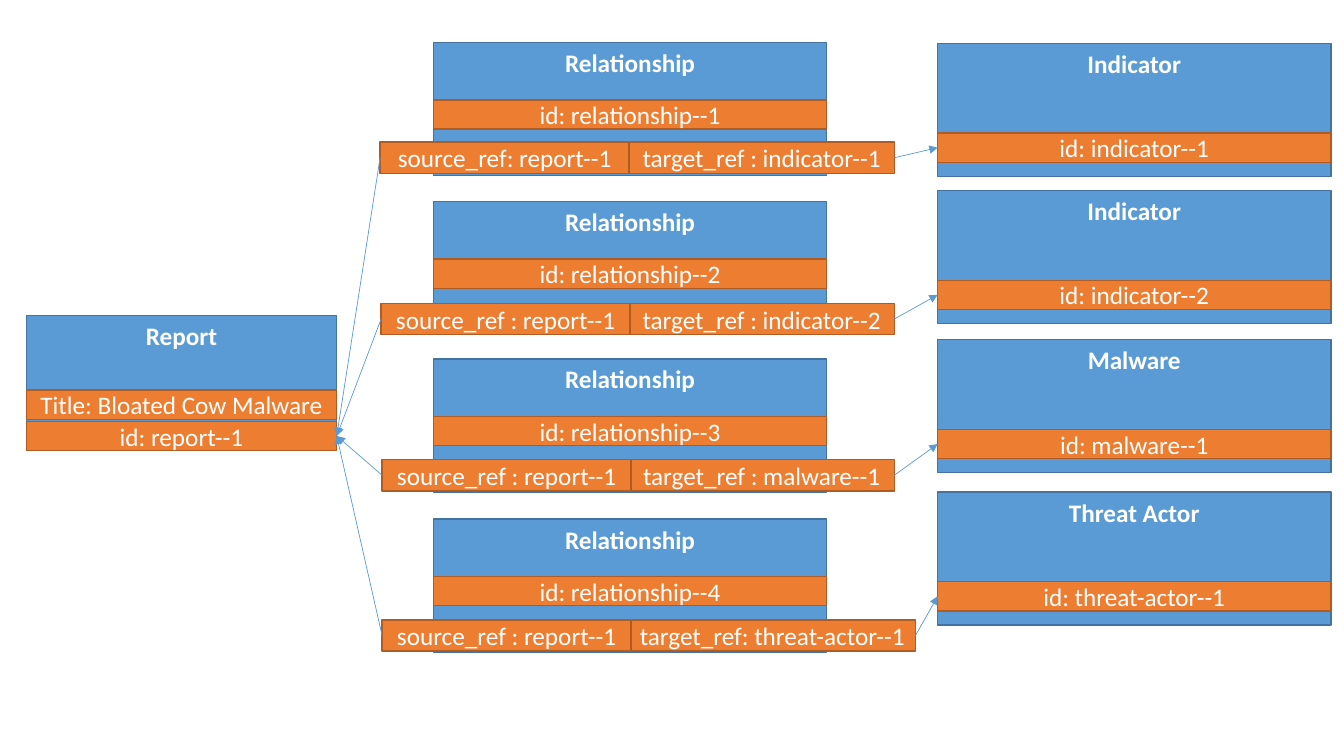
"""Build the slide of a report linked by relationships to its threat objects."""
from dataclasses import dataclass

from lxml.etree import SubElement
from pptx import Presentation
from pptx.dml.color import RGBColor
from pptx.enum.shapes import MSO_CONNECTOR, MSO_SHAPE
from pptx.enum.text import MSO_ANCHOR, PP_ALIGN
from pptx.oxml.ns import qn
from pptx.shapes.autoshape import Shape
from pptx.shapes.connector import Connector
from pptx.slide import Slide
from pptx.util import Inches, Pt

BLUE, BLUE_EDGE = "5B9BD5", "43739E"
ORANGE, ORANGE_EDGE = "ED7D31", "AF5C24"
WHITE = "FFFFFF"
RIGHT_SIDE, LEFT_SIDE = 3, 1
REPORT_LEFT, REPORT_WIDTH = 0.26, 3.08
RELATIONSHIP_LEFT, OBJECT_LEFT, CARD_WIDTH = 4.3, 9.3, 3.9
CARD_HEIGHT, FIELD_HEIGHT, REF_HEIGHT = 1.32, 0.29, 0.31
SOURCE_WIDTH, TARGET_LEFT = 2.47, 6.24


@dataclass
class Link:
    """One relationship and the object that it points to."""
    top: float
    ref_top: float
    source_left: float
    source: str
    target: str
    target_width: float
    object_top: float
    object_title: str
    object_id: str


LINKS = [
    Link(0.42, 1.41, 3.77, "source_ref: report--1", "target_ref : indicator--1", 2.63,
         0.43, "Indicator", "id: indicator--1"),
    Link(2.0, 3.01, 3.78, "source_ref : report--1", "target_ref : indicator--2", 2.63,
         1.89, "Indicator", "id: indicator--2"),
    Link(3.56, 4.56, 3.79, "source_ref : report--1", "target_ref : malware--1", 2.63,
         3.37, "Malware", "id: malware--1"),
    Link(5.15, 6.15, 3.79, "source_ref : report--1", "target_ref: threat-actor--1", 2.84,
         4.88, "Threat Actor", "id: threat-actor--1"),
]


def color(value: str) -> RGBColor:
    """Turn a hex string into a colour."""
    return RGBColor.from_string(value)


def add_box(slide: Slide, text: str, left: float, top: float, width: float,
            height: float, fill: str, edge: str) -> Shape:
    """Draw a filled rectangle with centred white text."""
    box = slide.shapes.add_shape(MSO_SHAPE.RECTANGLE, Inches(left), Inches(top),
                                 Inches(width), Inches(height))
    box.shadow.inherit = False
    box.fill.solid()
    box.fill.fore_color.rgb = color(fill)
    box.line.color.rgb = color(edge)
    box.line.width = Pt(1)
    box.text_frame.text = text
    box.text_frame.word_wrap = False
    paragraph = box.text_frame.paragraphs[0]
    paragraph.alignment = PP_ALIGN.CENTER
    font = paragraph.runs[0].font
    font.name, font.size = "Calibri", Pt(18)
    font.color.rgb = color(WHITE)
    return box


def add_card(slide: Slide, title: str, left: float, top: float, width: float) -> Shape:
    """Draw a blue card with a bold title at its top."""
    card = add_box(slide, title, left, top, width, CARD_HEIGHT, BLUE, BLUE_EDGE)
    card.text_frame.vertical_anchor = MSO_ANCHOR.TOP
    card.text_frame.paragraphs[0].runs[0].font.bold = True
    return card


def add_field(slide: Slide, text: str, left: float, top: float, width: float,
              height: float = FIELD_HEIGHT) -> Shape:
    """Draw an orange field of a card."""
    field = add_box(slide, text, left, top, width, height, ORANGE, ORANGE_EDGE)
    field.text_frame.vertical_anchor = MSO_ANCHOR.MIDDLE
    return field


def add_arrow(slide: Slide, start: Shape, start_side: int, end: Shape, end_side: int) -> Connector:
    """Join the sides of two fields with a thin arrow."""
    arrow = slide.shapes.add_connector(MSO_CONNECTOR.STRAIGHT, 0, 0, 0, 0)
    arrow.begin_connect(start, start_side)
    arrow.end_connect(end, end_side)
    arrow.line.color.rgb = color(BLUE)
    arrow.line.width = Pt(0.5)
    SubElement(arrow.line._get_or_add_ln(), qn("a:tailEnd"), type="triangle")
    SubElement(arrow._element.spPr, qn("a:effectLst"))
    return arrow


def add_link(slide: Slide, link: Link, number: int, report_id: Shape) -> None:
    """Draw a relationship, its object and the arrows between them."""
    add_card(slide, link.object_title, OBJECT_LEFT, link.object_top, CARD_WIDTH)
    object_id = add_field(slide, link.object_id, OBJECT_LEFT, link.object_top + 0.89, CARD_WIDTH)
    add_card(slide, "Relationship", RELATIONSHIP_LEFT, link.top, CARD_WIDTH)
    target = add_field(slide, link.target, TARGET_LEFT, link.ref_top, link.target_width, REF_HEIGHT)
    source = add_field(slide, link.source, link.source_left, link.ref_top, SOURCE_WIDTH, REF_HEIGHT)
    add_field(slide, f"id: relationship--{number}", RELATIONSHIP_LEFT, link.top + 0.57, CARD_WIDTH)
    add_arrow(slide, target, RIGHT_SIDE, object_id, LEFT_SIDE)
    add_arrow(slide, source, LEFT_SIDE, report_id, RIGHT_SIDE)


def main() -> None:
    """Build and save the slide."""
    presentation = Presentation()
    presentation.slide_width, presentation.slide_height = Inches(13.33), Inches(7.5)
    slide = presentation.slides.add_slide(presentation.slide_layouts[6])
    add_card(slide, "Report", REPORT_LEFT, 3.13, REPORT_WIDTH)
    add_field(slide, "Title: Bloated Cow Malware", REPORT_LEFT, 3.87, REPORT_WIDTH)
    report_id = add_field(slide, "id: report--1", REPORT_LEFT, 4.18, REPORT_WIDTH)
    for number, link in enumerate(LINKS, start=1):
        add_link(slide, link, number, report_id)
    presentation.save("out.pptx")


if __name__ == "__main__":
    main()
